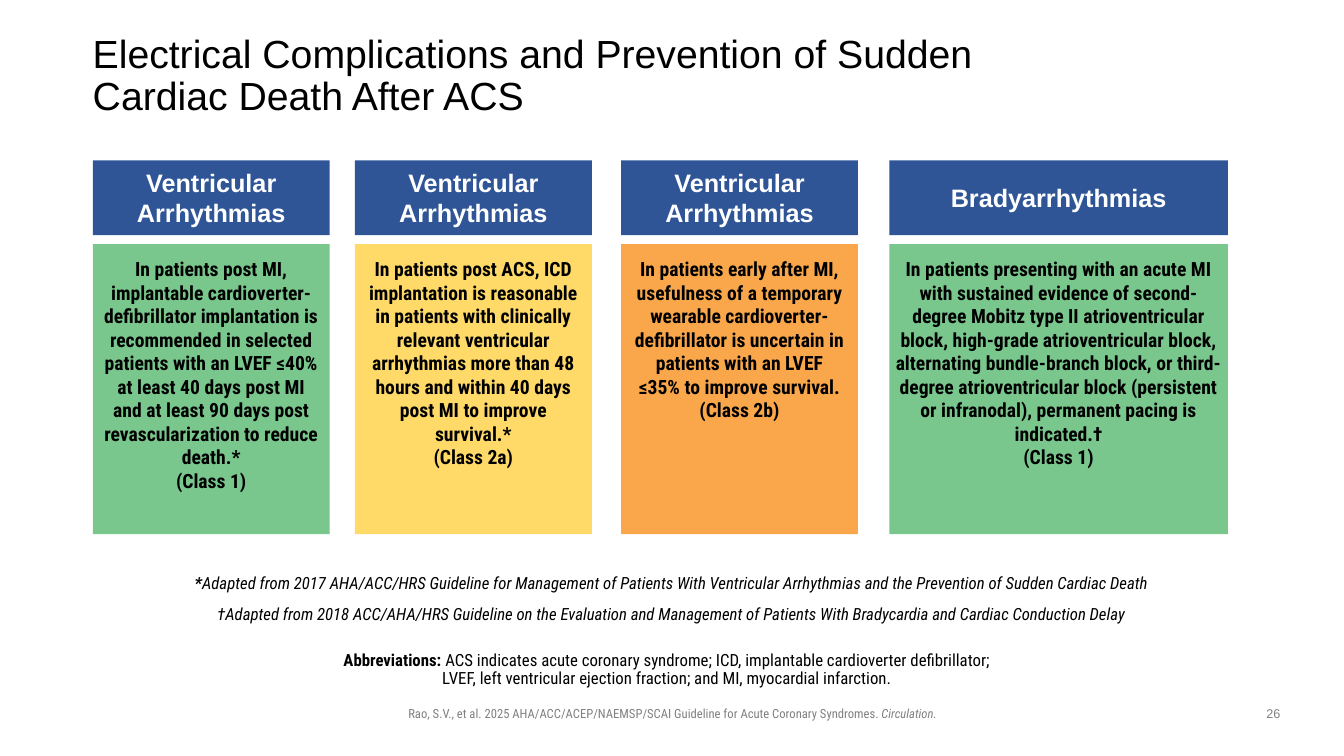
from pptx import Presentation
from pptx.dml.color import RGBColor
from pptx.enum.shapes import MSO_SHAPE
from pptx.enum.text import MSO_ANCHOR, PP_ALIGN
from pptx.util import Inches, Pt

WIDTH, HEIGHT = 13.33, 7.5
RECTANGLE = MSO_SHAPE.RECTANGLE
TOP, MIDDLE, BOTTOM = MSO_ANCHOR.TOP, MSO_ANCHOR.MIDDLE, MSO_ANCHOR.BOTTOM
LEFT, CENTER = PP_ALIGN.LEFT, PP_ALIGN.CENTER

BLACK = RGBColor(0x00, 0x00, 0x00)
WHITE = RGBColor(0xFF, 0xFF, 0xFF)
GRAY = RGBColor(0x80, 0x80, 0x80)
BLUE = RGBColor(0x2F, 0x55, 0x97)
GREEN = RGBColor(0x79, 0xC7, 0x8D)
YELLOW = RGBColor(0xFF, 0xDA, 0x68)
ORANGE = RGBColor(0xFA, 0xA7, 0x4B)
SANS, CONDENSED = "Arial", "Roboto Condensed"

CARDS_TOP, CARDS_HEIGHT = 1.59, 3.71
HEADER_SHARE, BODY_SHARE = 0.2, 0.776

# left, width, side margin, fill, heading, recommendation, class
CARDS = [
    (0.92, 2.35, 0.1, GREEN, "Ventricular Arrhythmias",
     "In patients post MI, implantable cardioverter-defibrillator implantation is "
     "recommended in selected patients with an LVEF ≤40% at least 40 days post MI "
     "and at least 90 days post revascularization to reduce death.*", "(Class 1)"),
    (3.52, 2.35, 0.13, YELLOW, "Ventricular Arrhythmias",
     "In patients post ACS, ICD implantation is reasonable in patients with "
     "clinically relevant ventricular arrhythmias more than 48 hours and within "
     "40 days post MI to improve survival.*", "(Class 2a)"),
    (6.16, 2.35, 0.13, ORANGE, "Ventricular Arrhythmias",
     "In patients early after MI, usefulness of a temporary wearable "
     "cardioverter-defibrillator is uncertain in patients with an LVEF ≤35% to "
     "improve survival.", "(Class 2b)"),
    (8.82, 3.36, 0.06, GREEN, "Bradyarrhythmias",
     "In patients presenting with an acute MI with sustained evidence of "
     "second-degree Mobitz type II atrioventricular block, high-grade "
     "atrioventricular block, alternating bundle-branch block, or third-degree "
     "atrioventricular block (persistent or infranodal), permanent pacing is "
     "indicated.†", "(Class 1)"),
]


def write_text(shape, paragraphs, size, font=CONDENSED, color=BLACK, align=CENTER,
               anchor=TOP, margins=(0.1, 0.05, 0.1, 0.05), line_spacing=None,
               space_after=None):
    """Fill a shape; each paragraph is a list of (text, bold, italic) runs."""
    frame = shape.text_frame
    frame.word_wrap = True
    frame.vertical_anchor = anchor
    (frame.margin_left, frame.margin_top,
     frame.margin_right, frame.margin_bottom) = map(Inches, margins)
    for index, runs in enumerate(paragraphs):
        paragraph = frame.add_paragraph() if index else frame.paragraphs[0]
        paragraph.alignment = align
        if line_spacing:
            paragraph.line_spacing = line_spacing
        if space_after:
            paragraph.space_after = Pt(space_after)
        for text, bold, italic in runs:
            for part, line in enumerate(text.split("\n")):
                if part:
                    paragraph.add_line_break()
                run = paragraph.add_run()
                run.text = line
                run.font.name = font
                run.font.size = Pt(size)
                run.font.bold = bold
                run.font.italic = italic
                run.font.color.rgb = color


def add_text(slide, box, paragraphs, size, **text_format):
    shape = slide.shapes.add_textbox(*map(Inches, box))
    write_text(shape, paragraphs, size, **text_format)


def add_panel(slide, box, fill, paragraphs, size, **text_format):
    shape = slide.shapes.add_shape(RECTANGLE, *map(Inches, box))
    shape.shadow.inherit = False
    shape.fill.solid()
    shape.fill.fore_color.rgb = fill
    shape.line.fill.background()
    write_text(shape, paragraphs, size, **text_format)


def add_card(slide, box, margin, fill, heading, recommendation, grade):
    """Blue heading over a panel coloured by recommendation class."""
    left, top, width, height = box
    body_height = height * BODY_SHARE
    add_panel(slide, (left, top, width, height * HEADER_SHARE), BLUE,
              [[(heading, True, False)]], 18, font=SANS, color=WHITE, anchor=MIDDLE)
    add_panel(slide, (left, top + height - body_height, width, body_height), fill,
              [[(recommendation, True, False)], [(grade, True, False)]], 14,
              margins=(margin, 0.13, margin, 0.05))


def add_title(slide, box):
    title = "Electrical Complications and Prevention of Sudden\nCardiac Death After ACS"
    add_text(slide, box, [[(title, False, False)]], 28, font=SANS, align=LEFT,
             anchor=MIDDLE, margins=(0, 0, 0, 0), line_spacing=0.9)


def add_notes(slide, box):
    """Source notes in the upper part of the box, abbreviations at its bottom."""
    left, top, width, height = box
    add_text(slide, (left, top, width, height / 2), [
        [("*", True, True),
         ("Adapted from 2017 AHA/ACC/HRS Guideline for Management of Patients With "
          "Ventricular Arrhythmias and the Prevention of Sudden Cardiac Death",
          False, True)],
        [("†Adapted from 2018 ACC/AHA/HRS Guideline on the Evaluation and Management "
          "of Patients With Bradycardia and Cardiac Conduction Delay", False, True)],
    ], 12, space_after=8)
    inset = (width - 6.87) / 2
    add_text(slide, (left + inset, top + height - 0.46, width - 2 * inset, 0.46), [
        [("Abbreviations: ", True, False),
         ("ACS indicates acute coronary syndrome; ICD, implantable cardioverter "
          "defibrillator; LVEF, left ventricular ejection fraction; and MI, "
          "myocardial infarction.", False, False)],
    ], 12, anchor=BOTTOM, margins=(0, 0.05, 0.1, 0.05), line_spacing=0.9)


def add_footer(slide, box):
    left, top, width, height = box
    number_width = 0.42
    add_text(slide, (left, top, 8.62, height), [
        [("Rao, S.V., et al. 2025 AHA/ACC/ACEP/NAEMSP/SCAI Guideline for Acute "
          "Coronary Syndromes. ", False, False), ("Circulation.", False, True)],
    ], 9, color=GRAY)
    add_text(slide, (left + width - number_width, top, number_width, height),
             [[("26", False, False)]], 9, font=SANS, color=GRAY)


def main():
    presentation = Presentation()
    presentation.slide_width = Inches(WIDTH)
    presentation.slide_height = Inches(HEIGHT)
    slide = presentation.slides.add_slide(presentation.slide_layouts[6])
    add_title(slide, (0.92, 0.4, 11.5, 0.72))
    for left, width, *content in CARDS:
        add_card(slide, (left, CARDS_TOP, width, CARDS_HEIGHT), *content)
    add_notes(slide, (1.34, 5.63, 10.65, 1.25))
    add_footer(slide, (2.36, 6.95, 10.48, 0.25))
    presentation.save("out.pptx")


if __name__ == "__main__":
    main()
